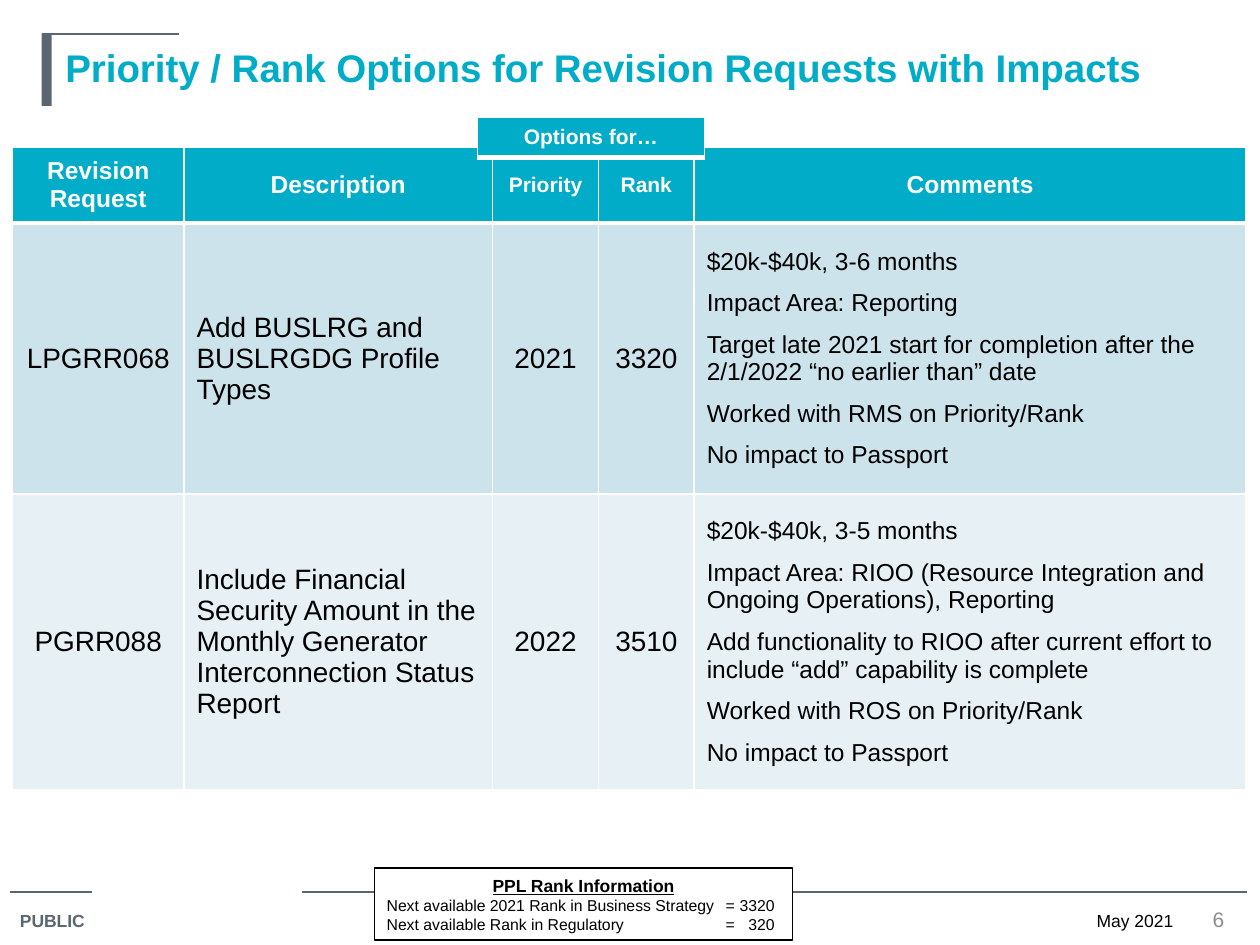
from lxml import etree
from pptx import Presentation
from pptx.dml.color import RGBColor
from pptx.enum.shapes import MSO_CONNECTOR, MSO_SHAPE
from pptx.enum.text import MSO_ANCHOR, PP_ALIGN
from pptx.oxml.ns import qn
from pptx.util import Inches, Pt

LEFT, CENTER, RIGHT = PP_ALIGN.LEFT, PP_ALIGN.CENTER, PP_ALIGN.RIGHT
TOP, MIDDLE = MSO_ANCHOR.TOP, MSO_ANCHOR.MIDDLE
STRAIGHT, RECTANGLE = MSO_CONNECTOR.STRAIGHT, MSO_SHAPE.RECTANGLE

TEAL = RGBColor(0x00, 0xAC, 0xC8)
SLATE = RGBColor(0x5B, 0x67, 0x70)
GRAY = RGBColor(0x8C, 0x8C, 0x8C)
BLACK = RGBColor(0x00, 0x00, 0x00)
WHITE = RGBColor(0xFF, 0xFF, 0xFF)
BANDS = [RGBColor(0xCC, 0xE3, 0xEB), RGBColor(0xE7, 0xF1, 0xF5)]

HEADINGS = [("Revision Request", 14), ("Description", 14), ("Priority", 12),
            ("Rank", 12), ("Comments", 14)]
REQUESTS = [
    ("LPGRR068", "Add BUSLRG and BUSLRGDG Profile Types", "2021", "3320", [
        "$20k-$40k, 3-6 months",
        "Impact Area: Reporting",
        "Target late 2021 start for completion after the 2/1/2022 “no earlier than” date",
        "Worked with RMS on Priority/Rank",
        "No impact to Passport"]),
    ("PGRR088", "Include Financial Security Amount in the Monthly Generator "
     "Interconnection Status Report", "2022", "3510", [
        "$20k-$40k, 3-5 months",
        "Impact Area: RIOO (Resource Integration and Ongoing Operations), Reporting",
        "Add functionality to RIOO after current effort to include “add” capability is complete",
        "Worked with ROS on Priority/Rank",
        "No impact to Passport"]),
]
COLUMN_WIDTHS = [1.36, 2.45, 0.84, 0.76, 4.38]
COLUMN_ALIGNS = [CENTER, LEFT, CENTER, CENTER, LEFT]
ROW_HEIGHTS = [0.6, 2.15, 2.35]


def write(paragraph, text, align=LEFT, color=BLACK, **formats):
    paragraph.alignment = align
    run = paragraph.add_run()
    run.text = text
    run.font.color.rgb = color
    for name, value in {"name": "Arial", **formats}.items():
        setattr(run.font, name, value)


def add_text(slide, box, text, anchor=TOP, **formats):
    frame = slide.shapes.add_textbox(*map(Inches, box)).text_frame
    frame.word_wrap = True
    frame.vertical_anchor = anchor
    write(frame.paragraphs[0], text, **formats)


def add_rule(slide, x1, x2, y):
    rule = slide.shapes.add_connector(STRAIGHT, *map(Inches, (x1, y, x2, y)))
    rule.line.color.rgb = SLATE
    rule.line.width = Pt(0.75)
    etree.SubElement(rule._element.spPr, qn("a:effectLst"))


def add_block(slide, box, fill):
    block = slide.shapes.add_shape(RECTANGLE, *map(Inches, box))
    block.shadow.inherit = False
    block.fill.solid()
    block.fill.fore_color.rgb = fill
    block.line.fill.background()
    return block


def add_grid(slide, box, widths, heights):
    table = slide.shapes.add_table(len(heights), len(widths), *map(Inches, box)).table
    for column, width in zip(table.columns, widths):
        column.width = Inches(width)
    for row, height in zip(table.rows, heights):
        row.height = Inches(height)
    return table


def fill_cell(cell, lines, fill, bottom=1, **formats):
    """Write one paragraph per line, with white borders around the cell."""
    cell.vertical_anchor = MIDDLE
    properties = cell._tc.get_or_add_tcPr()
    for side, points in {"L": 1, "R": 1, "T": 1, "B": bottom}.items():
        border = etree.SubElement(properties, qn(f"a:ln{side}"), w=str(Pt(points)))
        solid = etree.SubElement(border, qn("a:solidFill"))
        etree.SubElement(solid, qn("a:srgbClr"), val=str(WHITE))
    cell.fill.solid()
    cell.fill.fore_color.rgb = fill
    frame = cell.text_frame
    for index, line in enumerate(lines):
        paragraph = frame.add_paragraph() if index else frame.paragraphs[0]
        if index:
            paragraph.space_before = Pt(8)
        write(paragraph, line, **formats)


def add_header(slide, box):
    left, top, width, height = box
    add_block(slide, (left, top, 0.08, height), SLATE)
    add_rule(slide, left, left + 1.09, top)
    add_text(slide, (left + 0.09, top + 0.03, width - 0.09, height),
             "Priority / Rank Options for Revision Requests with Impacts",
             color=TEAL, size=Pt(22), bold=True)


def add_footer(slide, box):
    left, top, width, height = box
    right = left + width
    add_rule(slide, left, left + 0.65, top)
    add_rule(slide, left + 2.32, right, top)
    text_top = top + 0.09
    add_text(slide, (left - 0.02, text_top, 0.77, height), "PUBLIC",
             color=SLATE, size=Pt(10), bold=True)
    add_text(slide, (right - 1.82, text_top, 1.33, height), "May 2021",
             align=RIGHT, size=Pt(10))
    add_text(slide, (right - 0.48, text_top, 0.5, height), "6", anchor=MIDDLE,
             align=CENTER, color=GRAY, size=Pt(12))


def add_requests(slide, box):
    table = add_grid(slide, box, COLUMN_WIDTHS, ROW_HEIGHTS)
    for column, (heading, size) in enumerate(HEADINGS):
        fill_cell(table.cell(0, column), [heading], TEAL, bottom=3,
                  align=CENTER, color=WHITE, size=Pt(size), bold=True)
    for row, (request, band) in enumerate(zip(REQUESTS, BANDS), start=1):
        for column, (content, align) in enumerate(zip(request, COLUMN_ALIGNS)):
            is_comments = isinstance(content, list)
            fill_cell(table.cell(row, column), content if is_comments else [content],
                      band, align=align, size=Pt(14 if is_comments else 16), bold=False)


def add_options_label(slide, box):
    table = add_grid(slide, box, [box[2]], [box[3]])
    fill_cell(table.cell(0, 0), ["Options for…"], TEAL, bottom=3,
              align=CENTER, color=WHITE, size=Pt(12), bold=True)


def add_rank_information(slide, box):
    panel = add_block(slide, box, WHITE)
    panel.line.color.rgb = BLACK
    panel.line.width = Pt(0.75)
    frame = panel.text_frame
    frame.word_wrap = True
    frame.vertical_anchor = MIDDLE
    write(frame.paragraphs[0], "PPL Rank Information", align=CENTER,
          size=Pt(10), bold=True, underline=True)
    for line in ("Next available 2021 Rank in Business Strategy\t=\t3320",
                 "Next available Rank in Regulatory\t=\t320"):
        paragraph = frame.add_paragraph()
        tabs = etree.SubElement(paragraph._p.get_or_add_pPr(), qn("a:tabLst"))
        for position, side in ((2.69, "l"), (3.08, "r")):
            etree.SubElement(tabs, qn("a:tab"), pos=str(Inches(position)), algn=side)
        write(paragraph, line, size=Pt(9))


def main():
    presentation = Presentation()
    presentation.slide_width = Inches(10)
    presentation.slide_height = Inches(7.5)
    slide = presentation.slides.add_slide(presentation.slide_layouts[6])
    add_footer(slide, (0.08, 7.08, 9.82, 0.25))
    add_header(slide, (0.33, 0.27, 9.09, 0.57))
    add_requests(slide, (0.1, 1.17, 9.79, 5.1))
    add_rank_information(slide, (2.97, 6.89, 3.32, 0.57))
    add_options_label(slide, (3.79, 0.93, 1.8, 0.32))
    presentation.save("out.pptx")


if __name__ == "__main__":
    main()
